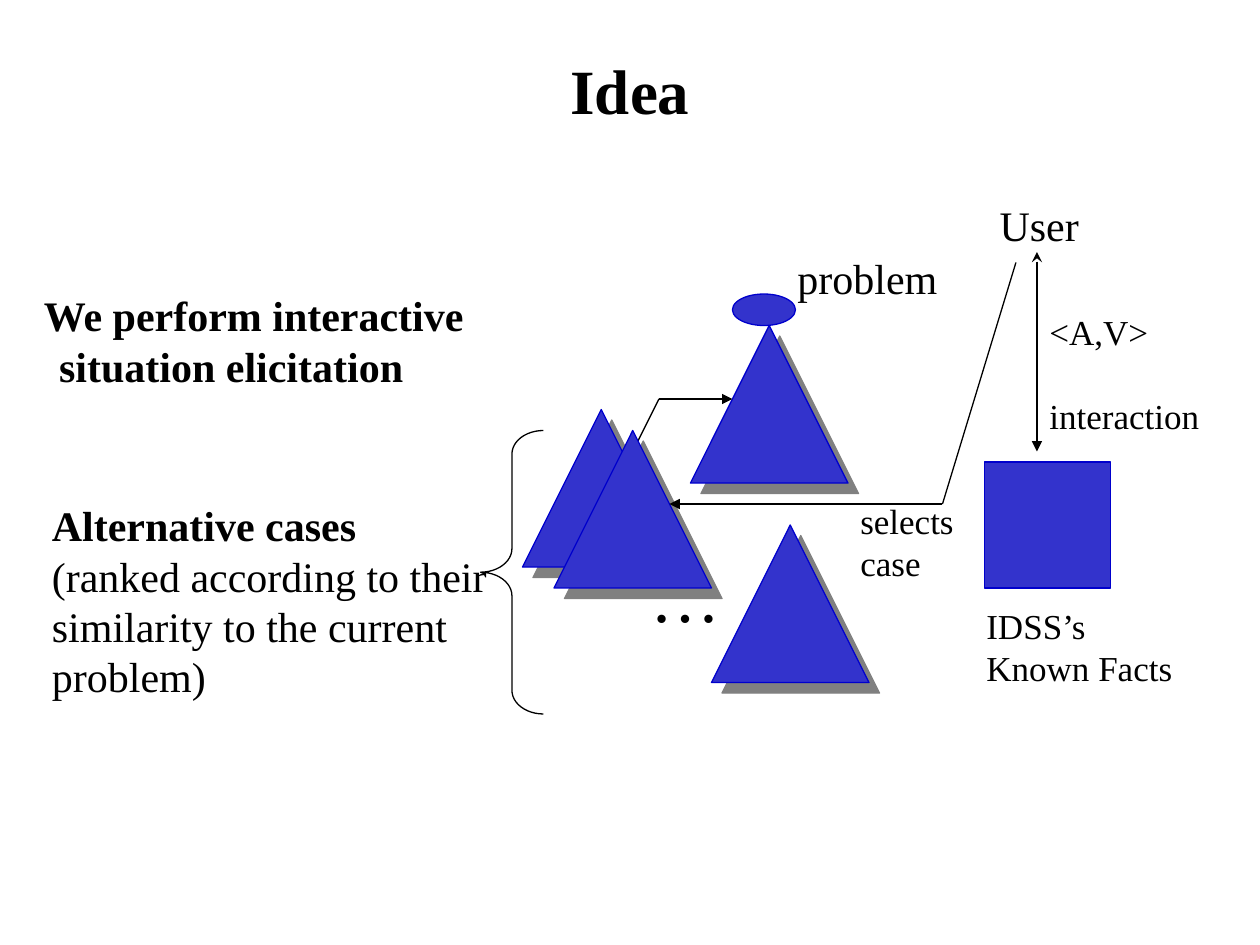
from dataclasses import dataclass
from typing import Optional

from lxml.etree import SubElement
from pptx import Presentation
from pptx.dml.color import RGBColor
from pptx.enum.shapes import MSO_CONNECTOR, MSO_SHAPE
from pptx.enum.text import MSO_ANCHOR, MSO_AUTO_SIZE, PP_ALIGN
from pptx.oxml.ns import qn
from pptx.util import Inches, Pt

BLACK = RGBColor(0x00, 0x00, 0x00)
BLUE = RGBColor(0x33, 0x33, 0xCC)
OUTLINE = RGBColor(0x00, 0x00, 0xCC)
SHADOW_GRAY = RGBColor(0x80, 0x80, 0x80)
FONT = "Times New Roman"

# Grid of twelve cells to the inch, shifted slightly left
CELL = 1 / 12
GRID_LEFT = -0.02
TRIANGLE_CELLS = 15


@dataclass
class Figure:
    kind: MSO_SHAPE
    column: float
    row: float
    columns: float = TRIANGLE_CELLS
    rows: float = TRIANGLE_CELLS
    filled: bool = True
    shadowed: bool = False


@dataclass
class Line:
    start: tuple
    end: tuple
    head: Optional[str] = None
    tail: Optional[str] = None


@dataclass
class Label:
    lines: list  # pairs of text and bold
    column: float
    row: float
    columns: float
    rows: float
    size: int = 20
    wrap: bool = False
    hanging: float = 0
    gap: float = 0


def triangle(column: float, row: float) -> Figure:
    return Figure(MSO_SHAPE.ISOSCELES_TRIANGLE, column, row, shadowed=True)


def across(column: float) -> int:
    return Inches(GRID_LEFT + column * CELL)


def cells(count: float) -> int:
    return Inches(count * CELL)


def frame(part) -> tuple:
    return across(part.column), cells(part.row), cells(part.columns), cells(part.rows)


def format_font(font, size: int, bold: bool) -> None:
    for name, value in {"name": FONT, "size": Pt(size), "bold": bold}.items():
        setattr(font, name, value)
    font.color.rgb = BLACK


def add_offset_shadow(shape) -> None:
    effects = shape._element.spPr.find(qn("a:effectLst"))
    shadow = SubElement(effects, qn("a:outerShdw"), blurRad="0",
                        dist=str(Pt(8.5)), dir=str(45 * 60000),
                        algn="ctr", rotWithShape="0")
    SubElement(shadow, qn("a:srgbClr"), val=str(SHADOW_GRAY))


def draw_figure(page, figure: Figure) -> None:
    shape = page.shapes.add_shape(figure.kind, *frame(figure))
    shape.shadow.inherit = False
    shape.line.width = Pt(0.75)
    if figure.filled:
        shape.fill.solid()
        shape.fill.fore_color.rgb = BLUE
        shape.line.color.rgb = OUTLINE
    else:
        shape.fill.background()
        shape.line.color.rgb = BLACK
    if figure.kind == MSO_SHAPE.LEFT_BRACE:
        shape.adjustments[0] = 0.375
    if figure.shadowed:
        add_offset_shadow(shape)


def draw_line(page, line: Line) -> None:
    (x1, y1), (x2, y2) = line.start, line.end
    connector = page.shapes.add_connector(
        MSO_CONNECTOR.STRAIGHT, across(x1), cells(y1), across(x2), cells(y2))
    connector.line.color.rgb = BLACK
    connector.line.width = Pt(0.75)
    outline = connector.line._get_or_add_ln()
    for end, arrow in (("a:headEnd", line.head), ("a:tailEnd", line.tail)):
        if arrow:
            SubElement(outline, qn(end), type=arrow)
    SubElement(connector._element.spPr, qn("a:effectLst"))


def draw_label(page, label: Label) -> None:
    box = page.shapes.add_textbox(*frame(label))
    text = box.text_frame
    text.word_wrap = label.wrap
    text.auto_size = MSO_AUTO_SIZE.SHAPE_TO_FIT_TEXT
    for index, (words, bold) in enumerate(label.lines):
        para = text.add_paragraph() if index else text.paragraphs[0]
        if index and label.gap:
            para.space_before = Pt(label.gap)
        if label.hanging:
            properties = para._p.get_or_add_pPr()
            properties.set("marL", str(Inches(label.hanging)))
            properties.set("indent", str(Inches(-label.hanging)))
        span = para.add_run()
        span.text = words
        format_font(span.font, label.size, bold)


def draw_title(page, words: str) -> None:
    title = page.shapes.title
    place = dict(zip(("left", "top", "width", "height"),
                     (Inches(0.75), cells(1), cells(102), cells(15))))
    for name, value in place.items():
        setattr(title, name, value)
    title.text_frame.text = words
    title.text_frame.vertical_anchor = MSO_ANCHOR.MIDDLE
    para = title.text_frame.paragraphs[0]
    para.alignment = PP_ALIGN.CENTER
    format_font(para.runs[0].font, 36, True)


# Parts from back to front
PARTS = [
    # Known facts and the dialogue with the user
    Figure(MSO_SHAPE.OVAL, 70, 28, 6, 3),
    Label([("IDSS’s", False), ("Known Facts", False)], 93, 57, 20.2, 9.2),
    Figure(MSO_SHAPE.RECTANGLE, 94, 44, 12, 12),
    Line((99, 24), (99, 43), head="stealth", tail="triangle"),
    Label([("<A,V>", False), ("interaction", False)], 99, 29, 17.4, 13.2, gap=24),
    # Current problem
    triangle(66, 31),
    Line((61, 42), (63, 38)),
    Line((63, 38), (70, 38), tail="triangle"),
    # Alternative cases
    Label([("…", False)], 61, 52, 9.1, 9.2, size=40),
    Figure(MSO_SHAPE.LEFT_BRACE, 46, 41, 6, 27, filled=False),
    triangle(50, 39),
    triangle(53, 41),
    triangle(68, 50),
    Label([("Alternative cases", True),
           ("(ranked according to their similarity to the current problem)", False)],
          4, 47, 45, 20.4, size=24, wrap=True),
    # Case selection
    Line((97, 25), (90, 48)),
    Line((90, 48), (64, 48), tail="triangle"),
    Label([("selects case", False)], 81, 47, 13.2, 9.2, wrap=True),
    # Statement and names
    Label([("We perform interactive situation elicitation", True)],
          3.25, 27, 55, 10.8, size=24, wrap=True, hanging=0.12),
    Label([("User", False)], 94.25, 18.4, 10, 6, size=24),
    Label([("problem", False)], 75, 23.5, 15.7, 6, size=24),
]

DRAWERS = {Figure: draw_figure, Line: draw_line, Label: draw_label}


def main() -> None:
    deck = Presentation()
    deck.slide_width, deck.slide_height = Inches(10), Inches(7.5)
    page = deck.slides.add_slide(deck.slide_layouts[5])
    draw_title(page, "Idea")
    for part in PARTS:
        DRAWERS[type(part)](page, part)
    deck.save("out.pptx")


if __name__ == "__main__":
    main()
